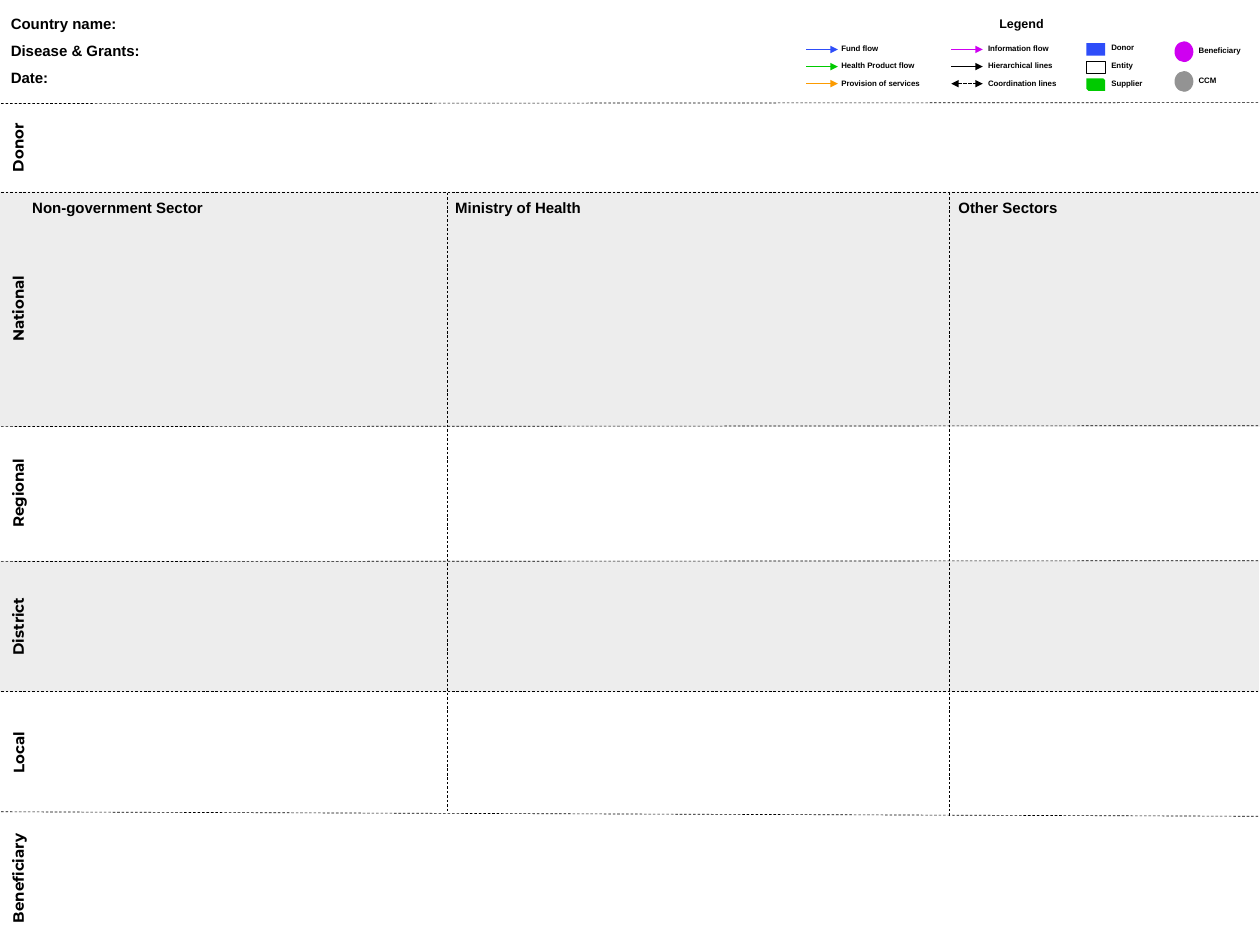
from dataclasses import dataclass

from lxml.etree import SubElement
from pptx import Presentation
from pptx.dml.color import RGBColor
from pptx.enum.dml import MSO_LINE
from pptx.enum.shapes import MSO_CONNECTOR, MSO_SHAPE
from pptx.enum.text import MSO_ANCHOR, PP_ALIGN
from pptx.oxml.ns import qn
from pptx.util import Emu, Pt

PX = 9144  # 100 px to the inch


@dataclass(frozen=True)
class Theme:
    black: str = "000000"
    blue: str = "2E4DF9"
    green: str = "00CA00"
    orange: str = "FC9B00"
    purple: str = "CF00F1"
    grey: str = "939393"
    body: str = "Arial"
    side: str = "Montserrat"
    heading: float = 12
    legend: float = 10
    label: float = 6.3
    thin: float = 0.5
    arrow: float = 1
    band_opacity: int = 7


THEME = Theme()

HEADER = ["Country name:", "Disease & Grants:", "Date:"]
BANDS = [(-3, 623, 1402, 146), (-2, 213, 1402, 261)]
LEVELS = [  # name, middle, length
    ("Donor", 164, 99), ("National", 343, 260), ("Regional", 548, 150),
    ("District", 696, 146), ("Local", 836, 133), ("Beneficiary", 976, 148),
]
SECTORS = [  # name, left, width
    ("Non-government Sector", 26, 223),
    ("Ministry of Health", 496, 200),
    ("Other Sectors", 1055, 202),
]
ROW_LINES = [(115, 114), (214, 214), (474, 473), (624, 623), (768, 768), (902, 907)]
COLUMN_LINES = [(497, 902), (1055, 907)]
COLUMN_TOP = 214

FLOW_COLUMNS = [  # arrow left, label left, flows as (name, colour, two-way)
    (896, 925, [("Fund flow", THEME.blue, False),
                ("Health Product flow", THEME.green, False),
                ("Provision of services", THEME.orange, False)]),
    (1057, 1088, [("Information flow", THEME.purple, False),
                  ("Hierarchical lines", THEME.black, False),
                  ("Coordination lines", THEME.black, True)]),
]
FLOW_TOP, FLOW_STEP, FLOW_LENGTH = 55, 19, 35
LABEL_RISE, LABEL_HEIGHT, LABEL_WIDTH = 11, 21, 119
SYMBOLS = [  # name, shape, fill, symbol box, label left, label top, label width
    ("Donor", MSO_SHAPE.RECTANGLE, THEME.blue, (1207, 48, 21, 14), 1225, 43, 58),
    ("Entity", MSO_SHAPE.RECTANGLE, None, (1207, 68, 21, 14), 1225, 63, 57),
    ("Supplier", MSO_SHAPE.SNIP_2_DIAG_RECTANGLE, THEME.green,
     (1207, 87, 21, 14), 1225, 83, 62),
    ("Beneficiary", MSO_SHAPE.OVAL, THEME.purple, (1305, 46, 21, 23), 1322, 46, 75),
    ("CCM", MSO_SHAPE.OVAL, THEME.grey, (1305, 79, 21, 23), 1322, 79, 46),
]


def scaled(*lengths):
    return [Emu(length * PX) for length in lengths]


def rgb(colour):
    return RGBColor.from_string(colour)


def add_text(shapes, lines, place, size, font=THEME.body, centred=False, spacing=None):
    box = shapes.add_textbox(*scaled(*place))
    frame = box.text_frame
    frame.word_wrap = True
    if centred:
        frame.vertical_anchor = MSO_ANCHOR.MIDDLE
    for index, line in enumerate(lines):
        para = frame.add_paragraph() if index else frame.paragraphs[0]
        para.alignment = PP_ALIGN.CENTER if centred else PP_ALIGN.LEFT
        if spacing:
            para.line_spacing = spacing
        span = para.add_run()
        span.text = line
        span.font.size = Pt(size)
        span.font.name = font
        span.font.bold = True
        span.font.color.rgb = rgb(THEME.black)
    return box


def add_symbol(shapes, kind, place, fill):
    """Add a filled shape without outline, or an outlined one when fill is None."""
    shape = shapes.add_shape(kind, *scaled(*place))
    shape.shadow.inherit = False
    if fill:
        shape.fill.solid()
        shape.fill.fore_color.rgb = rgb(fill)
        shape.line.fill.background()
    else:
        shape.fill.background()
        shape.line.color.rgb = rgb(THEME.black)
        shape.line.width = Pt(THEME.thin)
    return shape


def add_line(shapes, ends, colour, width, dash=None, kind=MSO_CONNECTOR.STRAIGHT, heads=()):
    line = shapes.add_connector(kind, *scaled(*ends))
    line.line.color.rgb = rgb(colour)
    line.line.width = Pt(width)
    if dash:
        line.line.dash_style = dash
    outline = line.line._get_or_add_ln()
    for head in heads:
        SubElement(outline, qn(f"a:{head}"), type="triangle")
    SubElement(line._element.spPr, qn("a:effectLst"))


def add_grid(shapes):
    for band in BANDS:
        shape = add_symbol(shapes, MSO_SHAPE.RECTANGLE, band, THEME.black)
        colour = shape._element.spPr.find(qn("a:solidFill"))[0]
        SubElement(colour, qn("a:alpha"), val=str(THEME.band_opacity * 1000))
    rows = [(1398, right, -2, left) for left, right in ROW_LINES]
    columns = [(x, COLUMN_TOP, x, bottom) for x, bottom in COLUMN_LINES]
    for ends in rows + columns:
        add_line(shapes, ends, THEME.black, THEME.thin, MSO_LINE.DASH)


def add_headings(shapes):
    box = add_text(shapes, HEADER, (0, 1, 370, 135), THEME.heading, spacing=1.5)
    box.text_frame.margin_left = Emu(12 * PX)
    for name, middle, length in LEVELS:
        place = (20 - length / 2, middle - 20, length, 40)
        place = [round(length) for length in place]
        box = add_text(shapes, [name], place, THEME.heading, THEME.side, centred=True)
        box.rotation = 270
    for name, left, width in SECTORS:
        add_text(shapes, [name], (left, 216, width, 30), THEME.heading)


def add_legend(shapes):
    add_text(shapes, ["Legend"], (888, 13, 494, 27), THEME.legend, centred=True)
    for arrow_left, label_left, flows in FLOW_COLUMNS:
        for row, (name, colour, two_way) in enumerate(flows):
            y = FLOW_TOP + row * FLOW_STEP
            add_line(shapes, (arrow_left, y, arrow_left + FLOW_LENGTH, y), colour,
                     THEME.arrow, MSO_LINE.SQUARE_DOT if two_way else None,
                     MSO_CONNECTOR.ELBOW,
                     ("headEnd", "tailEnd") if two_way else ("tailEnd",))
            add_text(shapes, [name], (label_left, y - LABEL_RISE, LABEL_WIDTH, LABEL_HEIGHT),
                     THEME.label)
    for name, kind, fill, place, left, top, width in SYMBOLS:
        add_symbol(shapes, kind, place, fill)
        add_text(shapes, [name], (left, top, width, LABEL_HEIGHT), THEME.label)


def main():
    deck = Presentation()
    deck.slide_width, deck.slide_height = scaled(1400, 1050)
    page = deck.slides.add_slide(deck.slide_layouts[6])
    add_grid(page.shapes)
    add_headings(page.shapes)
    add_legend(page.shapes.add_group_shape().shapes)
    deck.save("out.pptx")


if __name__ == "__main__":
    main()
